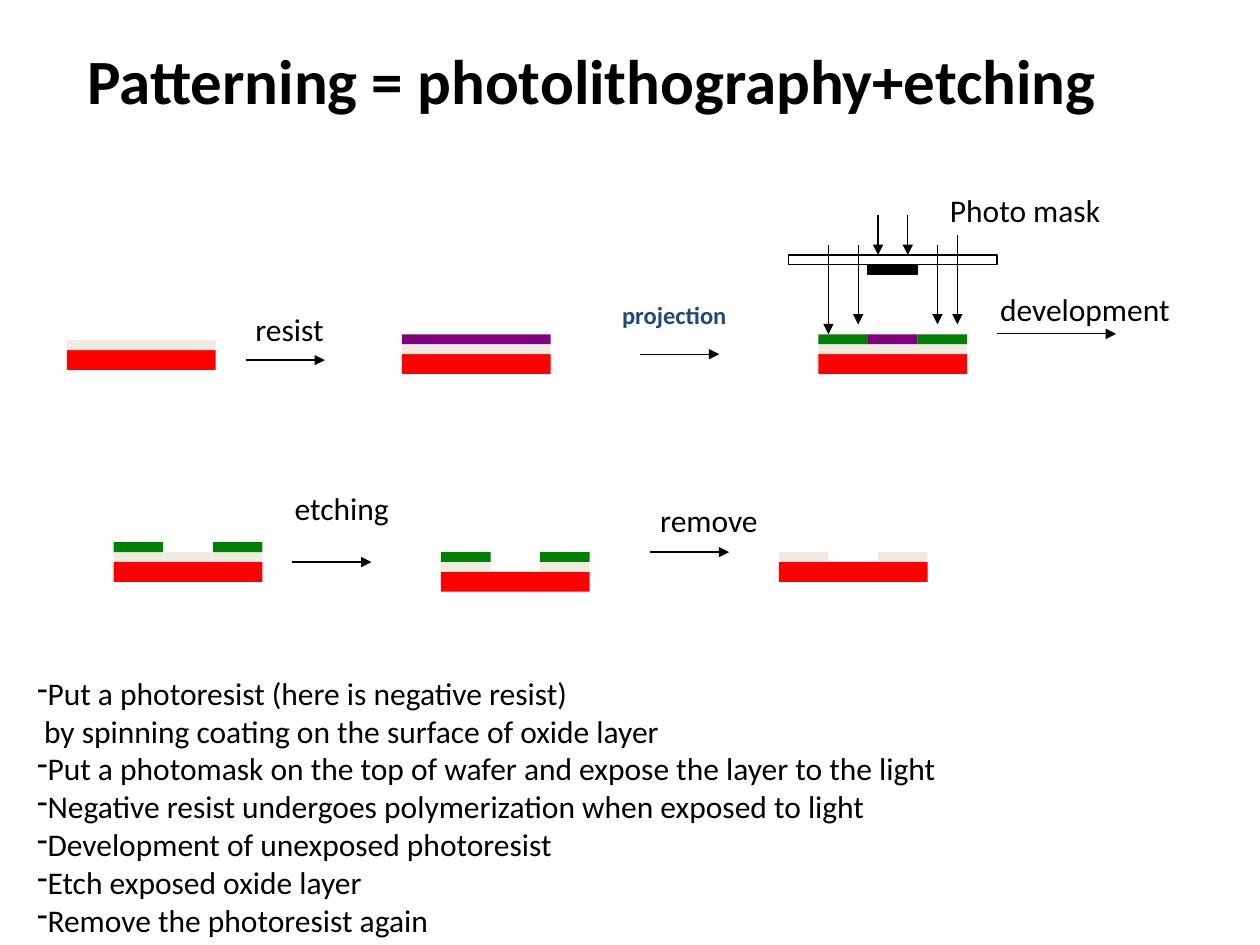
from lxml import etree
from pptx import Presentation
from pptx.dml.color import RGBColor
from pptx.enum.shapes import MSO_CONNECTOR, MSO_SHAPE
from pptx.enum.text import MSO_ANCHOR, MSO_AUTO_SIZE, PP_ALIGN
from pptx.oxml.ns import qn
from pptx.util import Cm, Pt

COLORS = {
    "black": "000000",
    "white": "FFFFFF",
    "silicon": "FF0000",
    "oxide": "EEECE1",
    "resist": "800080",
    "exposed": "008000",
    "projection": "1F497D",
}
FONT = "Calibri"

# Wafer geometry in cm
WAFER_WIDTH = 3.0
SUBSTRATE_HEIGHT = 0.4
FILM_HEIGHT = 0.2

# Film sections as (offset, width, material)
SIDES = ((0, 1), (2, 1))
FULL_OXIDE = [(0, WAFER_WIDTH, "oxide")]
FULL_RESIST = [(0, WAFER_WIDTH, "resist")]
SIDE_OXIDE = [(*side, "oxide") for side in SIDES]
SIDE_RESIST = [(*side, "exposed") for side in SIDES]
EXPOSED_RESIST = SIDE_RESIST + [(1, 1, "resist")]

# Wafers: left, top of substrate, films from bottom to top
WAFERS = [
    (1.35, 7.06, [FULL_OXIDE]),
    (8.1, 7.14, [FULL_OXIDE, FULL_RESIST]),
    (16.5, 7.14, [FULL_OXIDE, EXPOSED_RESIST]),
    (2.29, 11.33, [FULL_OXIDE, SIDE_RESIST]),
    (8.89, 11.53, [SIDE_OXIDE, SIDE_RESIST]),
    (15.7, 11.33, [SIDE_OXIDE]),
]

# Light rays relative to the exposed wafer: x, start, end
RAYS = [
    (1.2, -2.8, -2.0),
    (1.8, -2.8, -2.0),
    (0.2, -2.2, -0.4),
    (0.8, -2.2, -0.6),
    (2.4, -2.2, -0.6),
    (2.8, -2.4, -0.6),
]

# Process steps: arrow left, top, length; label text, box, format
STEPS = [
    ((4.95, 7.26, 1.6), "resist", (4.9, 6.12, 2.03, 1.02), {}),
    ((12.9, 7.14, 1.6), "projection", (12.29, 5.92, 2.9, 0.84),
     {"size": 14, "bold": True, "color": "projection"}),
    ((20.1, 6.73, 2.4), "development", (19.91, 5.72, 4.14, 1.02), {}),
    ((5.89, 11.33, 1.6), "etching", (5.69, 9.73, 2.57, 1.02), {}),
    ((13.1, 11.13, 1.6), "remove", (13.06, 9.98, 2.62, 1.02), {}),
]

# Explanation lines: text, whether it has a dash
NOTES = [
    ("Put a photoresist (here is negative resist)", True),
    ("by spinning coating on the surface of oxide layer", False),
    ("Put a photomask on the top of wafer and expose the layer to the light", True),
    ("Negative resist undergoes polymerization when exposed to light", True),
    ("Development of unexposed photoresist", True),
    ("Etch exposed oxide layer", True),
    ("Remove the photoresist again", True),
]


def rgb(name):
    return RGBColor.from_string(COLORS[name])


def format_paragraph(paragraph, text, size=18, bold=False, color="black",
                     align=PP_ALIGN.LEFT):
    paragraph.alignment = align
    run = paragraph.add_run()
    run.text = text
    run.font.name = FONT
    run.font.size = Pt(size)
    run.font.bold = bold
    run.font.color.rgb = rgb(color)


def add_text_box(slide, box, wrap=False, anchor=MSO_ANCHOR.TOP):
    frame = slide.shapes.add_textbox(*map(Cm, box)).text_frame
    frame.word_wrap = wrap
    frame.vertical_anchor = anchor
    frame.auto_size = MSO_AUTO_SIZE.NONE if wrap else MSO_AUTO_SIZE.SHAPE_TO_FIT_TEXT
    return frame


def add_label(slide, text, box, **text_format):
    format_paragraph(add_text_box(slide, box).paragraphs[0], text, **text_format)


def add_bar(slide, box, fill, outlined=False):
    shape = slide.shapes.add_shape(MSO_SHAPE.RECTANGLE, *map(Cm, box))
    shape.shadow.inherit = False
    shape.fill.solid()
    shape.fill.fore_color.rgb = rgb(fill)
    if outlined:
        shape.line.color.rgb = rgb("black")
        shape.line.width = Pt(0.75)
    else:
        shape.line.fill.background()


def add_arrow(slide, start, end):
    connector = slide.shapes.add_connector(
        MSO_CONNECTOR.STRAIGHT, *map(Cm, (*start, *end)))
    connector.line.color.rgb = rgb("black")
    connector.line.width = Pt(0.75)
    line = connector.line._get_or_add_ln()
    etree.SubElement(line, qn("a:tailEnd"), type="triangle")
    etree.SubElement(connector._element.spPr, qn("a:effectLst"))


def add_title(slide, box):
    frame = add_text_box(slide, box, wrap=True, anchor=MSO_ANCHOR.MIDDLE)
    format_paragraph(frame.paragraphs[0], "Patterning = photolithography+etching",
                     size=36, bold=True, align=PP_ALIGN.CENTER)


def add_wafer(slide, left, top, films):
    add_bar(slide, (left, top, WAFER_WIDTH, SUBSTRATE_HEIGHT), "silicon")
    for level, film in enumerate(films, start=1):
        for offset, width, material in film:
            film_box = (left + offset, top - level * FILM_HEIGHT, width, FILM_HEIGHT)
            add_bar(slide, film_box, material)


def add_exposure(slide, left, top):
    # Mask plate with its opaque part
    add_bar(slide, (left - 0.6, top - 2, 4.2, FILM_HEIGHT), "white", outlined=True)
    add_bar(slide, (left + 1, top - 1.8, 1, FILM_HEIGHT), "black", outlined=True)
    for x, start, end in RAYS:
        add_arrow(slide, (left + x, top + start), (left + x, top + end))
    add_label(slide, "Photo mask", (left + 2.4, top - 3.41, 3.86, 1.02))


def add_step(slide, arrow, text, box, text_format):
    left, top, length = arrow
    add_arrow(slide, (left, top), (left + length, top))
    add_label(slide, text, box, **text_format)


def add_notes_list(slide, box):
    frame = add_text_box(slide, box)
    for index, (text, has_dash) in enumerate(NOTES):
        paragraph = frame.add_paragraph() if index else frame.paragraphs[0]
        properties = paragraph._p.get_or_add_pPr()
        if has_dash:
            etree.SubElement(properties, qn("a:buFontTx"))
            etree.SubElement(properties, qn("a:buChar"), char="-")
        else:
            properties.set("marL", str(Cm(0.14)))
        format_paragraph(paragraph, text)


def main():
    presentation = Presentation()
    presentation.slide_width = Cm(25.4)
    presentation.slide_height = Cm(19.05)
    slide = presentation.slides.add_slide(presentation.slide_layouts[6])

    add_title(slide, (0.5, 0, 22.86, 3.18))
    for left, top, films in WAFERS:
        add_wafer(slide, left, top, films)
    add_exposure(slide, 16.5, 7.14)
    for step in STEPS:
        add_step(slide, *step)
    add_notes_list(slide, (0.5, 13.46, 20.09, 5.59))

    presentation.save("out.pptx")


if __name__ == "__main__":
    main()
